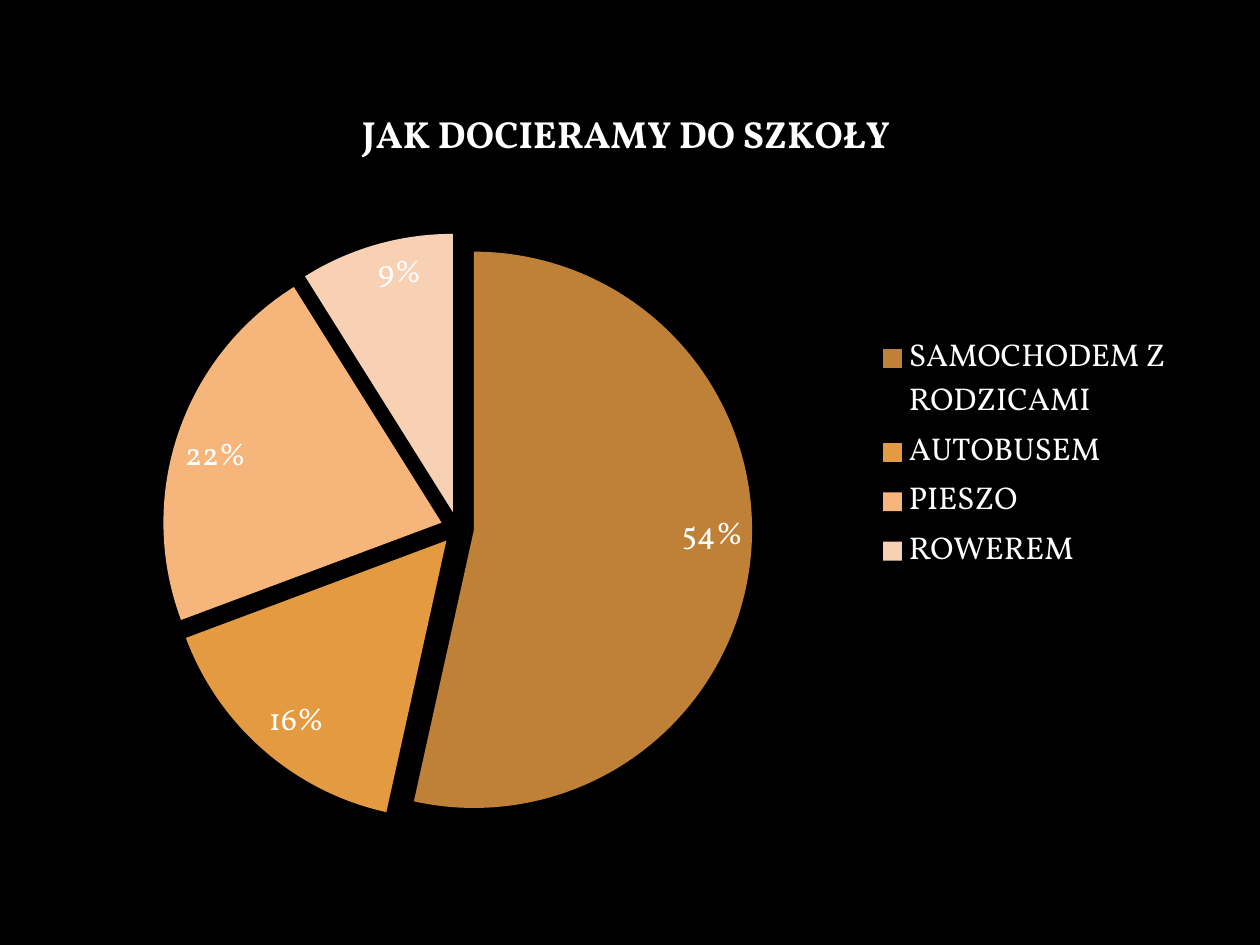
import pptx
import pptx.chart.data
import pptx.dml.color
import pptx.enum.chart
import pptx.oxml
import pptx.oxml.ns
import pptx.util
from pptx.util import Inches

# Content
TITLE = "JAK DOCIERAMY DO SZKOŁY"
SLICES = [
    ("SAMOCHODEM Z RODZICAMI", 54, "BE8137"),
    ("AUTOBUSEM", 16, "E39A41"),
    ("PIESZO", 22, "F5B57B"),
    ("ROWEREM", 9, "F8D1B5"),
]
FONT = "Vollkorn"
EXPLOSION = 6


def color(hex_text):
    return pptx.dml.color.RGBColor.from_string(hex_text)


def style_font(font, size, bold=False):
    font.name = FONT
    font.size = pptx.util.Pt(size)
    font.bold = bold
    font.color.rgb = color("FFFFFF")


def place(parent, before, inner=False, **fractions):
    """Set a manual layout, in fractions of the chart, ahead of the given tags."""
    for old in parent.findall(pptx.oxml.ns.qn("c:layout")):
        parent.remove(old)
    target = '<c:layoutTarget val="inner"/>' if inner else ""
    modes = "".join(f'<c:{k}Mode val="edge"/>' for k in "xy")
    values = "".join(f'<c:{k} val="{v}"/>' for k, v in fractions.items())
    layout = pptx.oxml.parse_xml(
        f'<c:layout {pptx.oxml.ns.nsdecls("c")}><c:manualLayout>'
        f"{target}{modes}{values}</c:manualLayout></c:layout>")
    tags = [pptx.oxml.ns.qn(tag) for tag in before]
    next(child for child in parent if child.tag in tags).addprevious(layout)


# Slide
prs = pptx.Presentation()
prs.slide_width, prs.slide_height = Inches(10), Inches(7.5)
s = prs.slides.add_slide(prs.slide_layouts[6])
s.background.fill.solid()
s.background.fill.fore_color.rgb = color("000000")

# Pie chart
data = pptx.chart.data.CategoryChartData()
data.categories = [name for name, _, _ in SLICES]
data.add_series(TITLE, [value for _, value, _ in SLICES])
chart = s.shapes.add_chart(
    pptx.enum.chart.XL_CHART_TYPE.PIE_EXPLODED,
    Inches(0.39), Inches(0.55), Inches(9), Inches(6.12), data).chart
style_font(chart.font, 18)
plot = chart.plots[0]
plot.vary_by_categories = True
place(chart._chartSpace.chart.plotArea, ["c:pieChart"], inner=True,
      x=0.1, y=0.21, w=0.52, h=0.77)

# Slices
series = plot.series[0]
for i, (_, _, fill) in enumerate(SLICES):
    point = series.points[i]
    point.format.fill.solid()
    point.format.fill.fore_color.rgb = color(fill)
    point.format.line.fill.background()
for explosion in series._element.iter(pptx.oxml.ns.qn("c:explosion")):
    explosion.set("val", str(EXPLOSION))

# Slice labels
labels = series.data_labels
labels.show_value = True
labels.number_format = '0"%"'
labels.number_format_is_linked = False
labels.position = pptx.enum.chart.XL_LABEL_POSITION.INSIDE_END
style_font(labels.font, 18)

# Title
chart.has_title = True
title = chart.chart_title
title.text_frame.text = TITLE
style_font(title.text_frame.paragraphs[0].runs[0].font, 21.6, bold=True)
title.include_in_layout = False
place(title._element, ["c:overlay"], x=0.27, y=0.04)

# Legend
chart.has_legend = True
legend = chart.legend
legend.position = pptx.enum.chart.XL_LEGEND_POSITION.RIGHT
legend.include_in_layout = False
style_font(legend.font, 18)
place(legend._element, ["c:overlay"], x=0.73, y=0.34, w=0.26, h=0.32)

prs.save("out.pptx")
